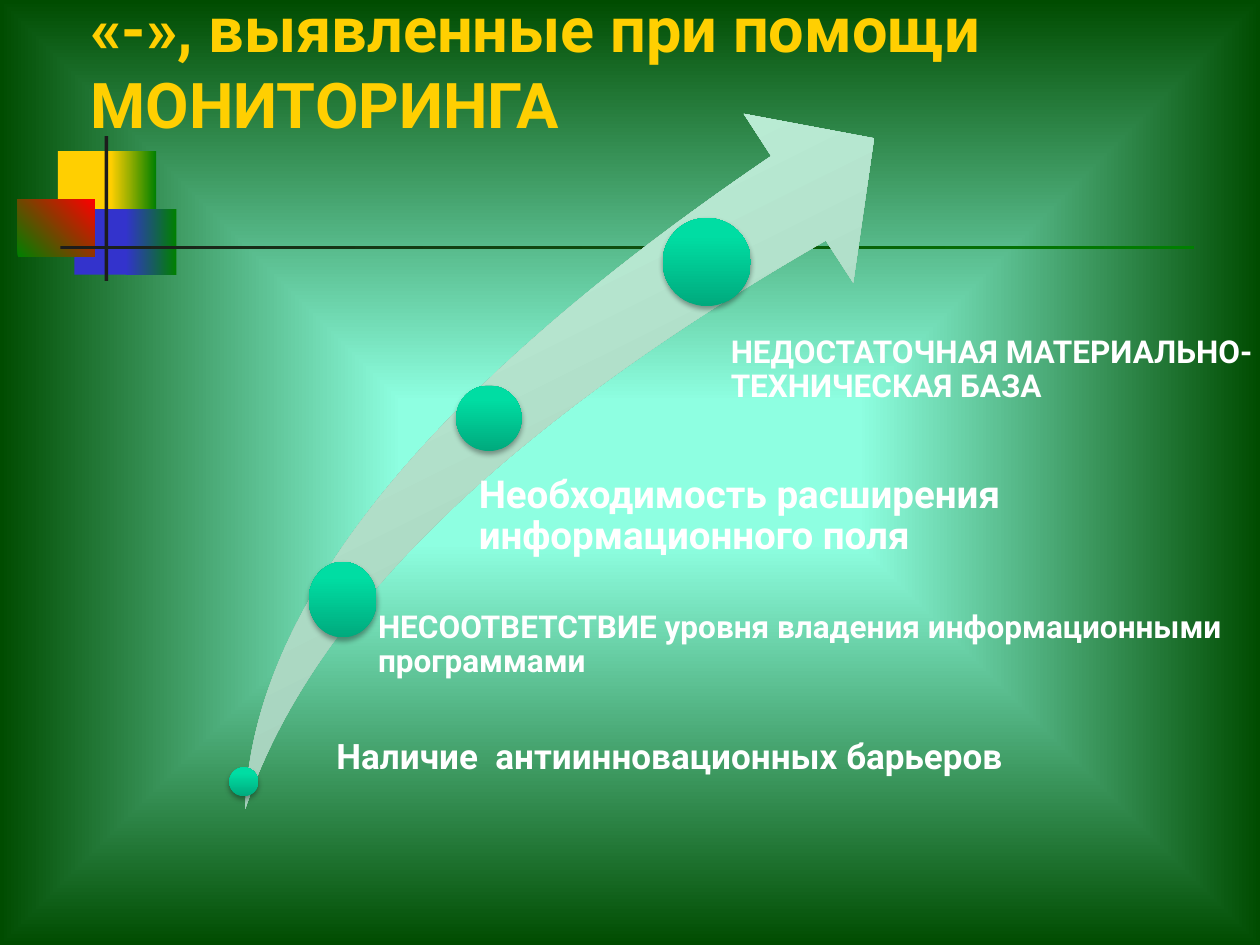
from dataclasses import dataclass

from lxml import etree
from pptx import Presentation
from pptx import util as u
from pptx.dml.color import RGBColor
from pptx.enum import shapes, text
from pptx.oxml.ns import qn

CELL = u.Inches(0.01)  # the slide is a grid of 1000 columns by 750 rows
COLUMNS, ROWS = 1000, 750
FONT = "Roboto"
COLORS = {
    "glow": "8EFFE1", "edge": "004C00", "green": "008000", "yellow": "FFCF01",
    "blue": "3333CC", "red": "FF0000", "ink": "1C1C1C", "white": "FFFFFF",
    "black": "000000", "arrow_low": "94BBA8", "arrow_mid": "C0F3DB",
    "arrow_high": "C0F5DC", "dot_low": "00AA7D", "dot_mid": "00DDA3",
    "dot_high": "00DEA4",
}
ARROW_STOPS = [(0, "arrow_low"), (80, "arrow_mid"), (100, "arrow_high")]
DOT_STOPS = [(0, "dot_low"), (80, "dot_mid"), (100, "dot_high")]

# dot area, label area, label indent, text size, wording
STEPS = [
    ((94, 436, 23, 23), (167, 414, 582, 93), 12, 20,
     "Наличие  антиинновационных барьеров"),
    ((157, 273, 54, 60), (191, 312, 705, 128), 21, 18,
     "НЕСООТВЕТСТВИЕ уровня владения информационными программами"),
    ((274, 133, 52, 52), (264, 204, 632, 107), 28, 22,
     "Необходимость расширения информационного поля"),
    ((438, 0, 70, 70), (455, 94, 477, 106), 37, 18,
     "НЕДОСТАТОЧНАЯ МАТЕРИАЛЬНО-ТЕХНИЧЕСКАЯ БАЗА"),
]


@dataclass
class Box:
    """An area of the slide, in grid columns and rows."""
    left: int
    top: int
    width: int
    height: int

    def inside(self, left, top, width, height):
        return Box(self.left + left, self.top + top, width, height)

    def lengths(self):
        return [n * CELL for n in (self.left, self.top, self.width, self.height)]


def add_color(parent, name):
    return etree.SubElement(parent, qn("a:srgbClr"), val=COLORS[name])


def set_gradient(holder, stops, angle=None):
    """Replace the solid fill of holder; without an angle it runs from the centre."""
    gradient = etree.Element(qn("a:gradFill"), rotWithShape="1")
    stop_list = etree.SubElement(gradient, qn("a:gsLst"))
    for percent, name in stops:
        stop = etree.SubElement(stop_list, qn("a:gs"), pos=str(percent * 1000))
        add_color(stop, name)
    if angle is None:
        shading = etree.SubElement(gradient, qn("a:path"))
        shading.set("path", "shape")
        etree.SubElement(shading, qn("a:fillToRect"),
                         {side: "50000" for side in "ltrb"})
    else:
        etree.SubElement(gradient, qn("a:lin"), ang=str(angle * 60000), scaled="0")
    holder.replace(holder.find(qn("a:solidFill")), gradient)


def add_figure(page, box, kind, fill, angle=0):
    """Add a borderless shape; fill is a colour name or a list of stops."""
    figure = page.shapes.add_shape(kind, *box.lengths())
    figure.shadow.inherit = False
    figure.line.fill.background()
    figure.fill.solid()
    if isinstance(fill, str):
        figure.fill.fore_color.rgb = RGBColor.from_string(COLORS[fill])
    else:
        set_gradient(figure.element.spPr, fill, angle)
    return figure


def add_soft_shadow(figure):
    effects = figure.element.spPr.find(qn("a:effectLst"))
    shadow = etree.SubElement(
        effects, qn("a:outerShdw"), blurRad=str(u.Pt(3.1)), dist=str(u.Pt(1.8)),
        dir=str(90 * 60000), rotWithShape="0")
    etree.SubElement(add_color(shadow, "black"), qn("a:alpha"), val="35000")


def add_text(page, box, wording, size, color):
    frame = page.shapes.add_textbox(*box.lengths()).text_frame
    frame.word_wrap = True
    para = frame.paragraphs[0]
    para.text = wording
    para.font.name, para.font.size, para.font.bold = FONT, u.Pt(size), True
    para.font.color.rgb = RGBColor.from_string(COLORS[color])
    return frame


def paint_background(page):
    page.background.fill.solid()
    holder = page.element.find(".//" + qn("p:bgPr"))
    set_gradient(holder, [(15, "glow"), (100, "edge")])


def add_ornament(page, box):
    """Coloured squares crossed by a short upright and a long fading rule."""
    parts = [
        ((32, 12, 48, 52), "yellow", 0),
        ((74, 12, 36, 52), [(0, "yellow"), (100, "green")], 0),
        ((45, 58, 46, 52), "blue", 0),
        ((86, 58, 40, 52), [(0, "blue"), (100, "green")], 0),
        ((0, 50, 61, 46), [(0, "green"), (100, "red")], 315),
        ((69, 0, 3, box.height), "ink", 0),
        ((34, 87, 900, 3), [(0, "ink"), (100, "green")], 0),
    ]
    for area, fill, angle in parts:
        add_figure(page, box.inside(*area), shapes.MSO_SHAPE.RECTANGLE, fill, angle)


def add_title(page, box):
    frame = add_text(page, box, "«-», выявленные при помощи МОНИТОРИНГА", 36, "yellow")
    frame.vertical_anchor = text.MSO_ANCHOR.BOTTOM


def add_step(page, box, dot_area, label_area, indent, size, wording):
    dot = add_figure(page, box.inside(*dot_area), shapes.MSO_SHAPE.OVAL, DOT_STOPS, 270)
    add_soft_shadow(dot)
    frame = add_text(page, box.inside(*label_area), wording, size, "white")
    frame.margin_left = indent * CELL
    frame.margin_top = frame.margin_right = frame.margin_bottom = 0
    para = frame.paragraphs[0]
    para.line_spacing = 0.9
    para.space_after = u.Pt(0.35 * size)


def add_rising_path(page, box):
    """The swoosh arrow with its dots and labels, from the bottom up."""
    arrow = add_figure(page, box.inside(0, 16, 684, 317),
                       shapes.MSO_SHAPE.SWOOSH_ARROW, ARROW_STOPS, 270)
    arrow.rotation = 333.5
    for index in range(2):
        arrow.adjustments[index] = 0.25
    for step in STEPS:
        add_step(page, box, *step)


def main():
    deck = Presentation()
    deck.slide_width, deck.slide_height = COLUMNS * CELL, ROWS * CELL
    page = deck.slides.add_slide(deck.slide_layouts[6])
    paint_background(page)
    add_ornament(page, Box(14, 108, 934, 115))
    add_title(page, Box(62, 0, 891, 117))
    add_rising_path(page, Box(88, 173, 932, 507))
    deck.save("out.pptx")


if __name__ == "__main__":
    main()
